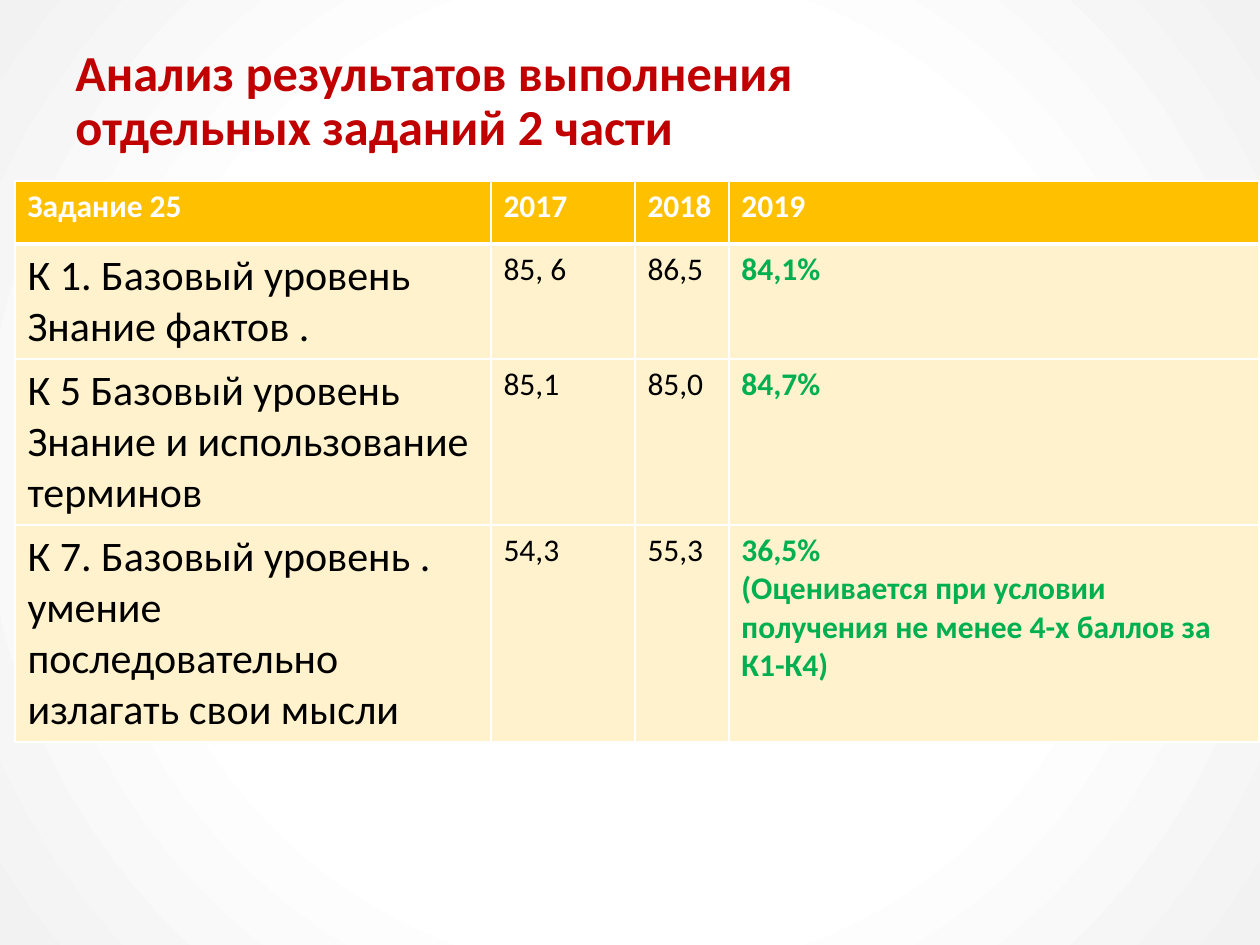
from lxml import etree
from pptx import Presentation
from pptx.dml.color import RGBColor
from pptx.enum.shapes import MSO_SHAPE
from pptx.enum.text import MSO_ANCHOR
from pptx.oxml.ns import qn
from pptx.util import Pt

RECT = MSO_SHAPE.RECTANGLE
MIDDLE = MSO_ANCHOR.MIDDLE
PX_PER_INCH = 126
WHITE = RGBColor(0xFF, 0xFF, 0xFF)
BLACK = RGBColor(0x00, 0x00, 0x00)
PALE_GRAY = RGBColor(0xF2, 0xF2, 0xF2)
RED = RGBColor(0xC0, 0x00, 0x00)
GREEN = RGBColor(0x00, 0xB0, 0x50)
GOLD = RGBColor(0xFF, 0xC0, 0x00)
CREAM = RGBColor(0xFF, 0xF2, 0xCC)

TITLE = "Анализ результатов выполнения\vотдельных заданий 2 части"
ROWS = [
    ["Задание 25", "2017", "2018", "2019"],
    ["К 1. Базовый уровень\nЗнание фактов .", "85, 6", "86,5", "84,1%"],
    ["К 5 Базовый уровень Знание и использование терминов", "85,1", "85,0", "84,7%"],
    ["К 7. Базовый уровень . умение последовательно излагать свои мысли", "54,3", "55,3",
     "36,5%\n(Оценивается при условии получения не менее 4-х баллов за К1-К4)"],
]
COL_WIDTHS = [476, 144, 94, 530]
ROW_HEIGHTS = [63, 115, 166, 217]
HEADER_STYLE = dict(size=18, color=WHITE, bold=True)
COL_STYLES = [dict(size=24), dict(size=18), dict(size=18),
              dict(size=18, color=GREEN, bold=True)]


def px(n):
    return round(n * 914400 / PX_PER_INCH)


def write(tf, text, size=18, color=BLACK, bold=False, font="Calibri", spacing=None):
    tf.word_wrap = True
    for i, line in enumerate(text.split("\n")):
        p = tf.paragraphs[0] if i == 0 else tf.add_paragraph()
        p.text = line
        if spacing:
            p.line_spacing = spacing
        for r in p.runs:
            r.font.name = font
            r.font.size = Pt(size)
            r.font.bold = bold
            r.font.color.rgb = color


class Deck:
    def __init__(self, width, height):
        self.prs = Presentation()
        self.prs.slide_width, self.prs.slide_height = px(width), px(height)
        self.s = self.prs.slides.add_slide(self.prs.slide_layouts[6])

    def backdrop(self, x, y, w, h, stops):
        sp = self.s.shapes.add_shape(RECT, px(x), px(y), px(w), px(h))
        sp.shadow.inherit = False
        sp.line.fill.background()
        grad = etree.Element(qn("a:gradFill"), rotWithShape="1")
        gs_list = etree.SubElement(grad, qn("a:gsLst"))
        for pos, color in stops:
            gs = etree.SubElement(gs_list, qn("a:gs"), pos=str(pos * 1000))
            etree.SubElement(gs, qn("a:srgbClr"), val=str(color))
        path = etree.SubElement(grad, qn("a:path"), path="circle")
        etree.SubElement(path, qn("a:fillToRect"), {side: "50000" for side in "ltrb"})
        sp.element.spPr.find(qn("a:prstGeom")).addnext(grad)

    def text(self, x, y, w, h, text, **style):
        tf = self.s.shapes.add_textbox(px(x), px(y), px(w), px(h)).text_frame
        tf.vertical_anchor = MIDDLE
        write(tf, text, **style)

    def border(self, cell, edge, width, color):
        ln = etree.Element(qn(f"a:ln{edge}"), w=str(Pt(width)))
        fill = etree.SubElement(ln, qn("a:solidFill"))
        etree.SubElement(fill, qn("a:srgbClr"), val=str(color))
        cell.fill._xPr.insert("LRTB".index(edge), ln)

    def table(self, x, y, widths, heights, rows):
        table = self.s.shapes.add_table(len(rows), len(widths), px(x), px(y),
                                        px(sum(widths)), px(sum(heights))).table
        table.horz_banding = False
        for col, w in zip(table.columns, widths):
            col.width = px(w)
        for i, (row, h) in enumerate(zip(rows, heights)):
            table.rows[i].height = px(h)
            for j, text in enumerate(row):
                cell = table.cell(i, j)
                cell.fill.solid()
                cell.fill.fore_color.rgb = CREAM if i else GOLD
                for edge in "LRTB":
                    thick = (i, edge) in ((0, "B"), (1, "T"))
                    self.border(cell, edge, 3 if thick else 1, WHITE)
                write(cell.text_frame, text, **(COL_STYLES[j] if i else HEADER_STYLE))


def main():
    deck = Deck(1260, 945)
    deck.backdrop(0, 0, 1260, 945, [(0, WHITE), (58, WHITE), (100, PALE_GRAY)])
    deck.text(63, 59, 1197, 86, TITLE, size=28.8, color=RED, bold=True, spacing=0.9)
    deck.table(15, 181, COL_WIDTHS, ROW_HEIGHTS, ROWS)
    deck.prs.save("out.pptx")


if __name__ == "__main__":
    main()
